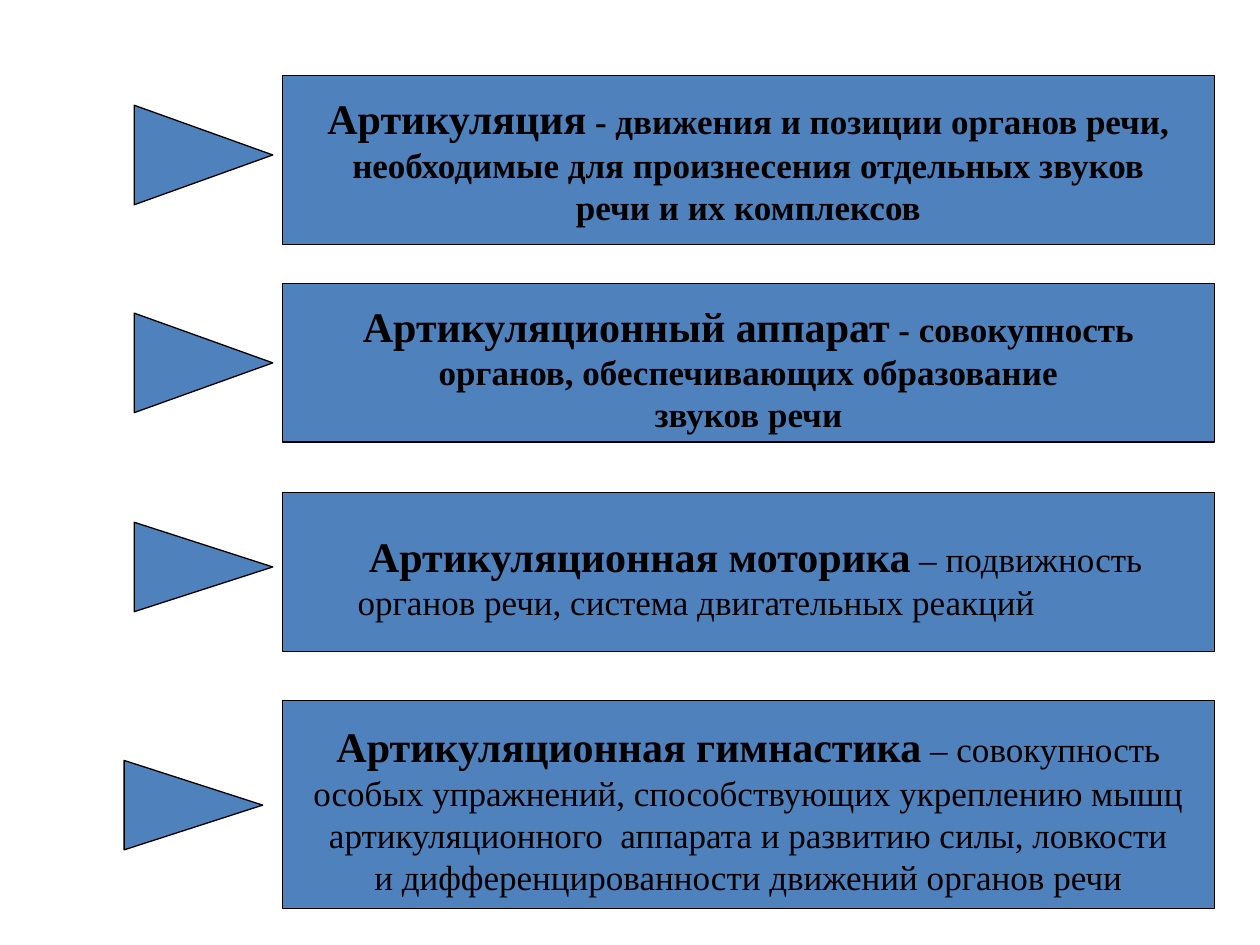
"""Build a slide of four speech articulation definitions with pointers."""
from pptx import Presentation
from pptx.dml.color import RGBColor
from pptx.enum.shapes import MSO_SHAPE as Shape
from pptx.enum.text import MSO_ANCHOR as Anchor, PP_ALIGN as Align
from pptx.util import Inches, Pt


def color(value):
    return RGBColor.from_string(value)


def add_block(kind, left, top, width, height):
    shape = slide.shapes.add_shape(
        kind, Inches(left), Inches(top), Inches(width), Inches(height))
    shape.shadow.inherit = False
    shape.fill.solid()
    shape.fill.fore_color.rgb = color("4F81BD")
    shape.line.color.rgb = color("000000")
    shape.line.width = Pt(0.75)
    return shape


presentation = Presentation()
presentation.slide_width = Inches(10)
presentation.slide_height = Inches(7.5)
slide = presentation.slides.add_slide(presentation.slide_layouts[6])

pointer_length = 1.1
definitions = [
    {"top": 0.6, "height": 1.34, "inset": 0.05, "bold": True,
     "pointer": (1.22, 0.68, 0.79), "term": "Артикуляция",
     "lines": [" - движения и позиции органов речи,",
               "необходимые для произнесения отдельных звуков",
               "речи и их комплексов"]},
    {"top": 2.25, "height": 1.26, "inset": 0.12, "bold": True,
     "pointer": (1.22, 2.33, 0.79), "term": "Артикуляционный аппарат",
     "lines": [" - совокупность",
               "органов, обеспечивающих образование",
               "звуков речи"]},
    {"top": 3.91, "height": 1.26, "inset": 0.12, "bold": False,
     "pointer": (1.26, 3.95, 0.71), "term": "Артикуляционная моторика",
     "indents": [0.59, 0.5],
     "lines": [" – подвижность",
               "органов речи, система двигательных реакций"]},
    {"top": 5.56, "height": 1.65, "inset": 0.12, "bold": False,
     "pointer": (1.18, 5.84, 0.71), "term": "Артикуляционная гимнастика",
     "lines": [" – совокупность",
               "особых упражнений, способствующих укреплению мышц",
               "артикуляционного  аппарата и развитию силы, ловкости",
               "и дифференцированности движений органов речи"]},
]

for definition in definitions:
    left, top, width = definition["pointer"]
    pointer = add_block(Shape.ISOSCELES_TRIANGLE, left, top, width, pointer_length)
    pointer.rotation = 90

    box = add_block(Shape.RECTANGLE, 2.24, definition["top"], 7.4, definition["height"])
    frame = box.text_frame
    frame.word_wrap = True
    frame.vertical_anchor = Anchor.MIDDLE
    frame.margin_top = Inches(definition["inset"])
    frame.text = "\n".join(definition["lines"])

    first = frame.paragraphs[0]
    first.text = definition["term"]
    first.add_run().text = definition["lines"][0]
    for paragraph in frame.paragraphs:
        paragraph.alignment = Align.CENTER
        for run in paragraph.runs:
            run.font.name = "Times New Roman"
            run.font.size = Pt(20)
            run.font.bold = definition["bold"]
            run.font.color.rgb = color("000000")
    first.runs[0].font.size = Pt(24)
    first.runs[0].font.bold = True

    for paragraph, indent in zip(frame.paragraphs, definition.get("indents", [])):
        paragraph.alignment = Align.LEFT
        properties = paragraph._p.get_or_add_pPr()
        properties.set("marL", str(Inches(indent)))
        properties.set("indent", "0")

presentation.save("out.pptx")
